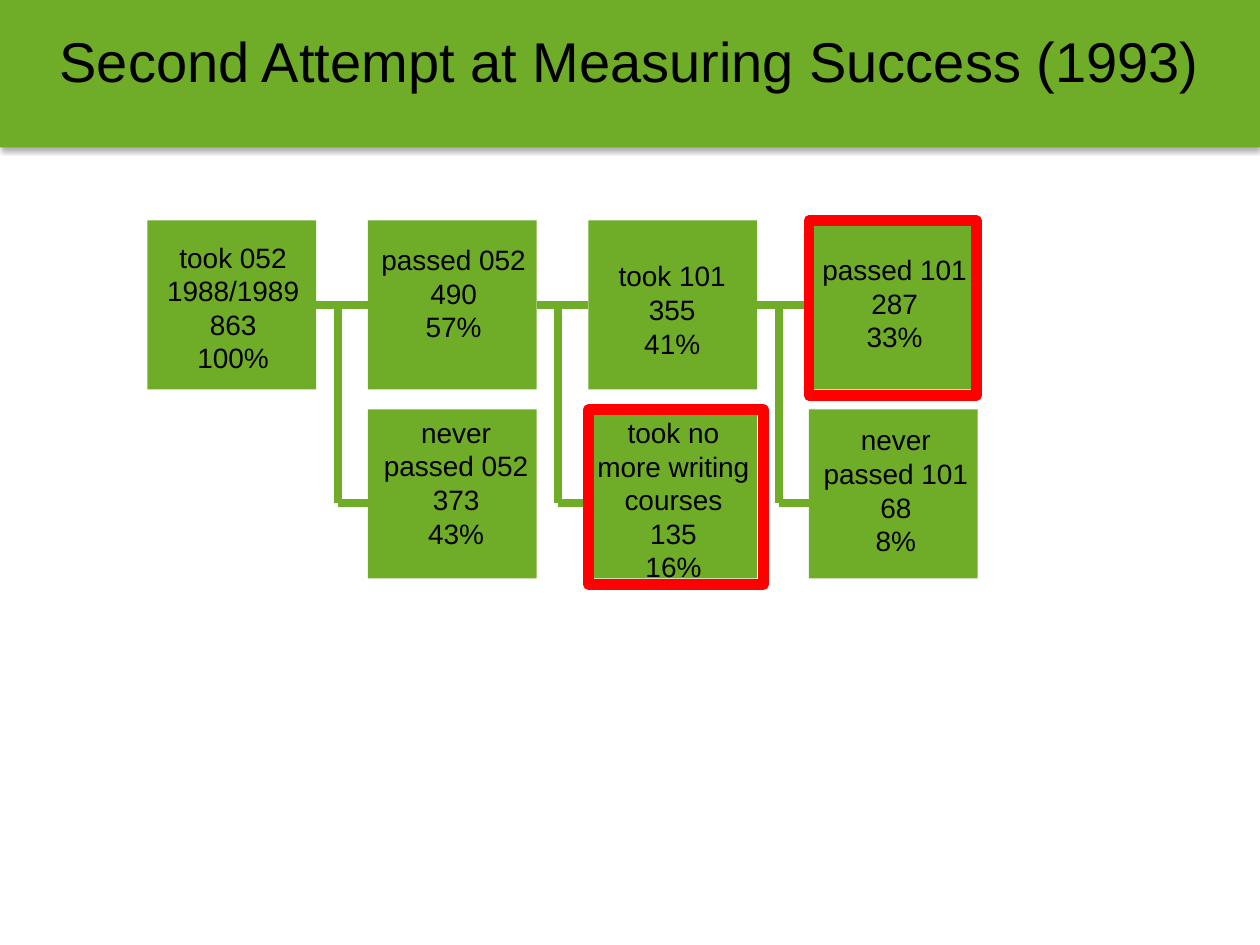
from lxml.etree import SubElement
from pptx import Presentation
from pptx.dml.color import RGBColor
from pptx.enum.shapes import MSO_CONNECTOR, MSO_SHAPE
from pptx.enum.text import MSO_ANCHOR, PP_ALIGN
from pptx.oxml import parse_xml
from pptx.oxml.ns import nsdecls, qn
from pptx.util import Inches, Pt

COLORS = {"green": "6FAC27", "red": "FF0000", "text": "000000"}
FONT = "Arial"
BOX = 1.34
PITCH = 1.75
FIRST_LEFT = 1.17
ROW_TOPS = (1.75, 3.25)
STEM_TOP, BRANCH_Y = 2.42, 3.99

STAGES = [
    (0, 0, (1.17, 1.86, 1.36, 1.16), ["took 052", "1988/1989", "863", "100%"]),
    (1, 0, (2.92, 1.88, 1.36, 0.89), ["passed 052", "490", "57%"]),
    (1, 1, (3, 3.25, 1.24, 1.16), ["never", "passed 052", "373", "43%"]),
    (2, 0, (4.86, 2.01, 0.95, 0.89), ["took 101", "355", "41%"]),
    (2, 1, (4.68, 3.25, 1.33, 1.43),
     ["took no more writing", "courses", "135", "16%"]),
    (3, 0, (6.45, 1.96, 1.3, 0.89), ["passed 101", "287", "33%"]),
    (3, 1, (6.49, 3.31, 1.24, 1.16), ["never", "passed 101", "68", "8%"]),
]
HIGHLIGHTS = [(4.67, 3.25, 1.39, 1.39), (6.42, 1.75, 1.33, 1.39)]


class FlowSlide:
    """Hold the flow chart's style and the slide it is drawn on."""

    def __init__(self, slide):
        self.slide = slide
        self.shapes = slide.shapes

    def color(self, name):
        return RGBColor.from_string(COLORS[name])

    def add_lines(self, frame, lines, size, anchor, wrap):
        frame.word_wrap = wrap
        frame.vertical_anchor = anchor
        frame.margin_left = frame.margin_right = Inches(0.04)
        frame.margin_top = frame.margin_bottom = Inches(0.04)
        for index, line in enumerate(lines):
            paragraph = frame.add_paragraph() if index else frame.paragraphs[0]
            paragraph.alignment = PP_ALIGN.CENTER
            run = paragraph.add_run()
            run.text = line
            run.font.size = Pt(size)
            run.font.name = FONT
            run.font.color.rgb = self.color("text")

    def title(self, text, place):
        heading = self.shapes.title
        heading.left, heading.top, heading.width, heading.height = map(Inches, place)
        self.add_lines(heading.text_frame, [text], 32, MSO_ANCHOR.TOP, True)
        heading._element.getparent().append(heading._element)

    def rectangle(self, place):
        rectangle = self.shapes.add_shape(MSO_SHAPE.RECTANGLE, *map(Inches, place))
        rectangle.shadow.inherit = False
        return rectangle

    def box(self, place):
        box = self.rectangle(place)
        box.fill.solid()
        box.fill.fore_color.rgb = self.color("green")
        box.line.fill.background()
        return box

    def banner(self, place):
        properties = self.box(place)._element.spPr
        properties.find(qn("a:effectLst")).append(parse_xml(
            f'<a:outerShdw {nsdecls("a")} blurRad="{Pt(3.1)}" dist="{Pt(1.8)}" '
            'dir="5400000" rotWithShape="0"><a:srgbClr val="000000">'
            '<a:alpha val="35000"/></a:srgbClr></a:outerShdw>'))

    def highlight(self, place):
        frame = self.rectangle(place)
        frame.fill.background()
        frame.line.color.rgb = self.color("red")
        frame.line.width = Pt(6)

    def label(self, place, lines, wrap):
        label = self.shapes.add_textbox(*map(Inches, place))
        self.add_lines(label.text_frame, lines, 16, MSO_ANCHOR.MIDDLE, wrap)

    def line(self, start, end):
        line = self.shapes.add_connector(
            MSO_CONNECTOR.STRAIGHT, *map(Inches, (*start, *end)))
        line.line.color.rgb = self.color("green")
        line.line.width = Pt(4.5)
        SubElement(line._element.spPr, qn("a:effectLst"))
        return line

    def link(self, source, target):
        link = self.line((0, 0), (0, 0))
        link.begin_connect(source, 3)
        link.end_connect(target, 1)


def main():
    deck = Presentation()
    deck.slide_width, deck.slide_height = Inches(10), Inches(7.5)
    flow = FlowSlide(deck.slides.add_slide(deck.slide_layouts[5]))

    for column in range(1, 4):
        left = FIRST_LEFT + column * PITCH
        stem = left - 0.24
        flow.line((stem, STEM_TOP), (stem, BRANCH_Y))
        flow.line((stem, BRANCH_Y), (left + 0.16, BRANCH_Y))

    upper_boxes = []
    for column, row, label_place, lines in STAGES:
        box = flow.box((FIRST_LEFT + column * PITCH, ROW_TOPS[row], BOX, BOX))
        if row == 0:
            upper_boxes.append(box)
        flow.label(label_place, lines, wrap="writing" in lines[0])
    for source, target in zip(upper_boxes, upper_boxes[1:]):
        flow.link(source, target)
    for place in HIGHLIGHTS:
        flow.highlight(place)

    flow.banner((0, 0, 10, 1.17))
    flow.title("Second Attempt at Measuring Success (1993)", (0, 0.17, 10, 0.67))
    deck.save("out.pptx")


if __name__ == "__main__":
    main()
